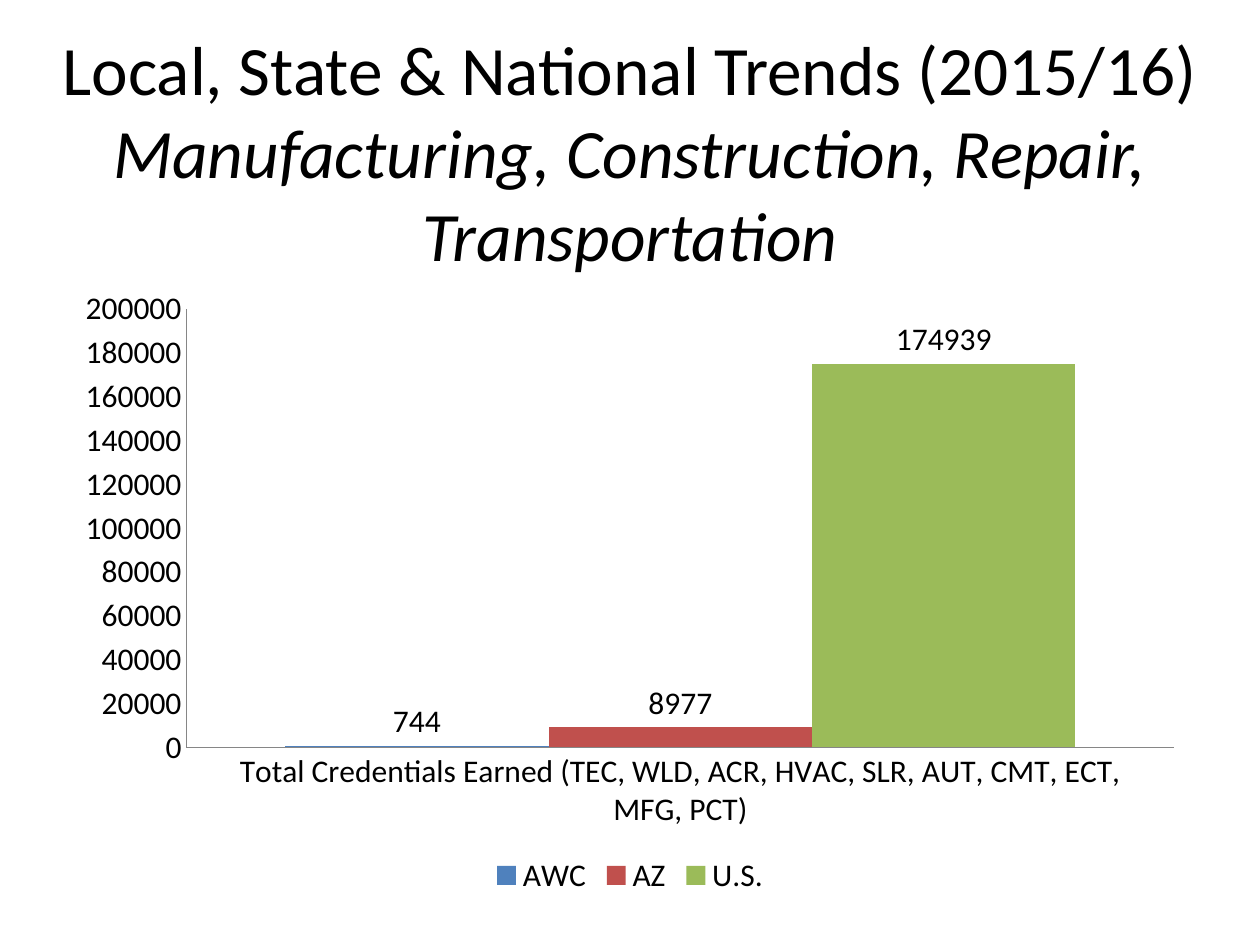
import pptx
import pptx.chart.data
import pptx.dml.color
import pptx.enum.chart
import pptx.enum.text
import pptx.util
from pptx.util import Cm

FONT = "Calibri"
BLACK = "000000"
AXIS_GRAY = "868686"
CATEGORY = "Total Credentials Earned (TEC, WLD, ACR, HVAC, SLR, AUT, CMT, ECT, MFG, PCT)"
CREDENTIALS = [("AWC", 744, "4F81BD"), ("AZ", 8977, "C0504D"), ("U.S.", 174939, "9BBB59")]


def color(value):
    """Return the colour for a hex string."""
    return pptx.dml.color.RGBColor.from_string(value)


def style_font(font, size):
    """Give a font the typeface and colour of the slide."""
    font.name = FONT
    font.size = pptx.util.Pt(size)
    font.color.rgb = color(BLACK)


def add_title(page, box):
    """Place the centred two-part title in the box."""
    frame = page.shapes.add_textbox(*box).text_frame
    frame.word_wrap = True
    frame.vertical_anchor = pptx.enum.text.MSO_ANCHOR.MIDDLE
    para = frame.paragraphs[0]
    para.alignment = pptx.enum.text.PP_ALIGN.CENTER
    style_font(para.font, 39.6)
    para.add_run().text = "Local, State & National Trends (2015/16)"
    para.add_line_break()
    span = para.add_run()
    span.text = "Manufacturing, Construction, Repair, Transportation"
    span.font.italic = True


def style_axis(axis):
    """Draw an axis as a thin gray line without ticks or gridlines."""
    axis.has_major_gridlines = False
    axis.major_tick_mark = pptx.enum.chart.XL_TICK_MARK.NONE
    axis.minor_tick_mark = pptx.enum.chart.XL_TICK_MARK.NONE
    axis.format.line.color.rgb = color(AXIS_GRAY)
    axis.format.line.width = pptx.util.Pt(0.75)


def style_series(series, fill):
    """Fill the columns and show their values above them."""
    series.format.fill.solid()
    series.format.fill.fore_color.rgb = color(fill)
    series.invert_if_negative = False
    labels = series.data_labels
    labels.show_value = True
    labels.number_format = "0"
    labels.number_format_is_linked = False
    labels.position = pptx.enum.chart.XL_LABEL_POSITION.OUTSIDE_END


def add_credentials_chart(page, box):
    """Place the clustered column chart of credentials in the box."""
    data = pptx.chart.data.CategoryChartData()
    data.categories = [CATEGORY]
    for name, total, _ in CREDENTIALS:
        data.add_series(name, [total])
    kind = pptx.enum.chart.XL_CHART_TYPE.COLUMN_CLUSTERED
    chart = page.shapes.add_chart(kind, *box, data).chart
    style_font(chart.font, 18)
    chart.has_title = False
    chart.has_legend = True
    chart.legend.position = pptx.enum.chart.XL_LEGEND_POSITION.BOTTOM
    chart.legend.include_in_layout = False
    style_axis(chart.category_axis)
    style_axis(chart.value_axis)
    chart.value_axis.minimum_scale = 0
    chart.value_axis.maximum_scale = 200000
    chart.value_axis.major_unit = 20000
    plot = chart.plots[0]
    plot.gap_width = 75
    plot.overlap = 0
    plot.vary_by_categories = False
    for series, (_, _, fill) in zip(plot.series, CREDENTIALS):
        style_series(series, fill)


def main():
    """Build and save the deck."""
    deck = pptx.Presentation()
    deck.slide_width, deck.slide_height = Cm(25.4), Cm(19.05)
    page = deck.slides.add_slide(deck.slide_layouts[6])
    add_title(page, (Cm(0), Cm(1.45), deck.slide_width, Cm(3.18)))
    add_credentials_chart(page, (Cm(1.27), Cm(5.59), Cm(22.86), Cm(12.57)))
    deck.save("out.pptx")


if __name__ == "__main__":
    main()
